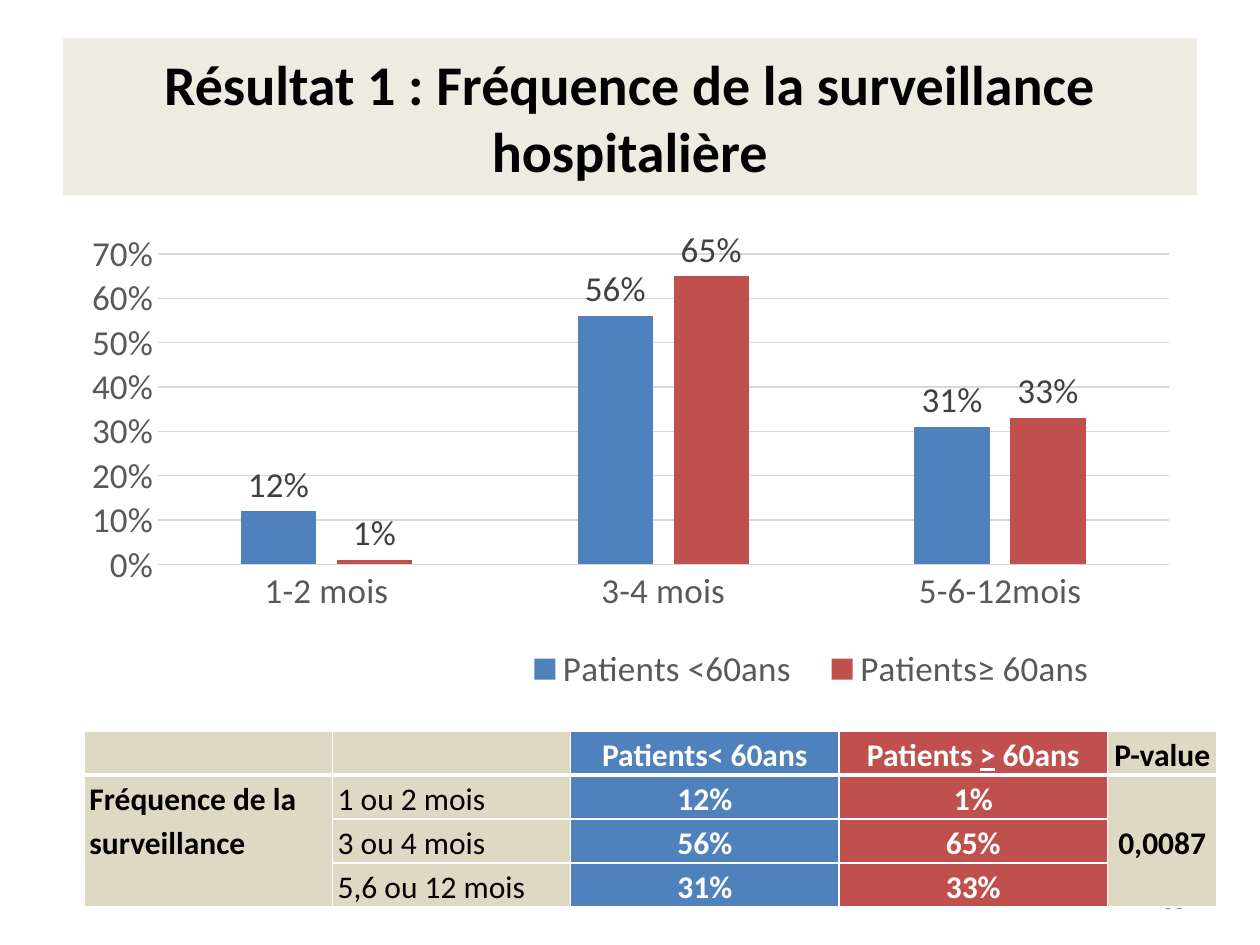
from dataclasses import dataclass

from lxml.etree import SubElement
from pptx import Presentation
from pptx.chart.data import CategoryChartData
from pptx.dml.color import RGBColor
from pptx.enum.chart import XL_CHART_TYPE, XL_LABEL_POSITION, XL_LEGEND_POSITION, XL_TICK_MARK
from pptx.enum.shapes import MSO_SHAPE
from pptx.enum.text import MSO_ANCHOR, PP_ALIGN
from pptx.oxml.ns import qn
from pptx.util import Inches, Pt

COLORS = {
    "black": "000000", "white": "FFFFFF", "banner": "EEECE1", "sand": "DDD9C3",
    "young": "4F81BD", "old": "C0504D", "axis": "595959", "label": "404040",
    "grid": "D9D9D9", "number": "8C8C8C",
}
COLUMN_WIDTHS = (1.97, 1.89, 2.13, 2.13, 0.87)
COLUMN_FILLS = ("sand", "sand", "young", "old", "sand")
ROW_HEIGHT = 0.35


@dataclass
class Span:
    text: str
    underline: bool = False


@dataclass
class Group:
    name: str
    color: str
    values: tuple


GROUPS = (
    Group("Patients <60ans", "young", (0.12, 0.56, 0.31)),
    Group("Patients≥ 60ans", "old", (0.01, 0.65, 0.33)),
)
PERIODS = ("1 ou 2 mois", "3 ou 4 mois", "5,6 ou 12 mois")


def rgb(name: str) -> RGBColor:
    return RGBColor.from_string(COLORS[name])


def style_font(font, size: float, color: str, **options) -> None:
    formats = {"name": "Calibri", "size": Pt(size), **options}
    for attribute, value in formats.items():
        setattr(font, attribute, value)
    font.color.rgb = rgb(color)


def write(frame, spans: list, align, size: float, color: str, bold: bool = False):
    frame.word_wrap = True
    frame.vertical_anchor = MSO_ANCHOR.MIDDLE
    para = frame.paragraphs[0]
    para.alignment = align
    for span in spans:
        run = para.add_run()
        run.text = span.text
        style_font(run.font, size, color, bold=bold, underline=span.underline)
    return para


def set_layout(element, index: int, **places: float) -> None:
    """Give a chart part a fixed place, in fractions of the chart."""
    for old in element.findall(qn("c:layout")):
        element.remove(old)
    layout = SubElement(element, qn("c:layout"))
    manual = SubElement(layout, qn("c:manualLayout"))
    if index == 0:
        SubElement(manual, qn("c:layoutTarget")).set("val", "inner")
    for side in ("x", "y"):
        SubElement(manual, qn(f"c:{side}Mode")).set("val", "edge")
    for side, value in places.items():
        SubElement(manual, qn(f"c:{side}")).set("val", str(value))
    element.insert(index, layout)


def set_borders(cell, widths: dict) -> None:
    properties = cell._tc.get_or_add_tcPr()
    for index, (side, width) in enumerate(widths.items()):
        line = SubElement(properties, qn(f"a:ln{side}"))
        line.set("w", str(Pt(width)))
        fill = SubElement(line, qn("a:solidFill"))
        SubElement(fill, qn("a:srgbClr")).set("val", COLORS["white"])
        properties.insert(index, line)


def add_title(page) -> None:
    banner = page.shapes.add_shape(
        MSO_SHAPE.RECTANGLE, Inches(0.5), Inches(0.3), Inches(9), Inches(1.25))
    banner.shadow.inherit = False
    banner.fill.solid()
    banner.fill.fore_color.rgb = rgb("banner")
    banner.line.fill.background()
    write(banner.text_frame, [Span("Résultat 1 : Fréquence de la surveillance hospitalière")],
          PP_ALIGN.CENTER, 32, "black", bold=True)


def add_page_number(page) -> None:
    box = page.shapes.add_textbox(Inches(7.17), Inches(6.95), Inches(2.33), Inches(0.4))
    write(box.text_frame, [Span("53")], PP_ALIGN.RIGHT, 12, "number")


def add_frequency_chart(page) -> None:
    data = CategoryChartData(number_format="0%")
    data.categories = ("1-2 mois", "3-4 mois", "5-6-12mois")
    for group in GROUPS:
        data.add_series(group.name, group.values)
    chart = page.shapes.add_chart(
        XL_CHART_TYPE.COLUMN_CLUSTERED, Inches(0.5), Inches(1.75),
        Inches(9), Inches(3.81), data).chart
    chart.has_title = False
    style_font(chart.font, 20, "black")

    # Axes
    for axis in (chart.category_axis, chart.value_axis):
        axis.major_tick_mark = axis.minor_tick_mark = XL_TICK_MARK.NONE
        style_font(axis.tick_labels.font, 20, "axis")
    values = chart.value_axis
    values.minimum_scale, values.maximum_scale, values.major_unit = 0, 0.7, 0.1
    values.tick_labels.number_format = "0%"
    values.tick_labels.number_format_is_linked = False
    values.format.line.fill.background()
    for line in (chart.category_axis.format.line, values.major_gridlines.format.line):
        line.color.rgb = rgb("grid")
        line.width = Pt(0.75)

    # Bars and their labels
    plot = chart.plots[0]
    plot.gap_width, plot.overlap, plot.vary_by_categories = 219, -27, False
    for series, group in zip(plot.series, GROUPS):
        series.format.fill.solid()
        series.format.fill.fore_color.rgb = rgb(group.color)
        labels = series.data_labels
        labels.show_value = True
        labels.position = XL_LABEL_POSITION.OUTSIDE_END
        labels.number_format = "0%"
        labels.number_format_is_linked = False
        style_font(labels.font, 20, "label")

    # Legend and plot places
    chart.has_legend = True
    chart.legend.position = XL_LEGEND_POSITION.BOTTOM
    chart.legend.include_in_layout = False
    style_font(chart.legend.font, 20, "axis")
    set_layout(chart.legend._element, 1, x=0.39, y=0.88, w=0.54, h=0.11)
    set_layout(chart._chartSpace.chart.plotArea, 0, x=0.084, y=0.07, w=0.891, h=0.647)


def table_rows() -> list:
    header = [[], [], [Span("Patients< 60ans")],
              [Span("Patients "), Span(">", underline=True), Span(" 60ans")],
              [Span("P-value")]]
    rows = [header]
    for index, period in enumerate(PERIODS):
        shares = [[Span(f"{group.values[index]:.0%}")] for group in GROUPS]
        rows.append([[], [Span(period)], *shares, []])
    rows[1][0] = [Span("Fréquence de la surveillance")]
    rows[1][4] = [Span("0,0087")]
    return rows


def add_frequency_table(page) -> None:
    rows = table_rows()
    table = page.shapes.add_table(
        len(rows), len(COLUMN_WIDTHS), Inches(0.67), Inches(5.8),
        Inches(sum(COLUMN_WIDTHS)), Inches(ROW_HEIGHT * len(rows))).table
    for column, width in zip(table.columns, COLUMN_WIDTHS):
        column.width = Inches(width)
    for row in table.rows:
        row.height = Inches(ROW_HEIGHT)
    for column in (0, 4):
        table.cell(1, column).merge(table.cell(3, column))

    margins = {"margin_left": 0.04, "margin_right": 0.04, "margin_top": 0, "margin_bottom": 0}
    for r, row in enumerate(rows):
        for c, spans in enumerate(row):
            cell = table.cell(r, c)
            for attribute, value in margins.items():
                setattr(cell, attribute, Inches(value))
            cell.fill.solid()
            cell.fill.fore_color.rgb = rgb(COLUMN_FILLS[c])
            set_borders(cell, {"L": 1, "R": 1, "T": 3 if r == 1 else 1, "B": 3 if r == 0 else 1})
            para = write(cell.text_frame, spans, PP_ALIGN.LEFT if c < 2 else PP_ALIGN.CENTER,
                         18, "white" if c in (2, 3) else "black", bold=c != 1)
            para.line_spacing = 1.15
            cell.vertical_anchor = MSO_ANCHOR.TOP if c == 0 else MSO_ANCHOR.MIDDLE


def main() -> None:
    deck = Presentation()
    deck.slide_width, deck.slide_height = Inches(10), Inches(7.5)
    page = deck.slides.add_slide(deck.slide_layouts[6])
    add_title(page)
    add_page_number(page)
    add_frequency_chart(page)
    add_frequency_table(page)
    deck.save("out.pptx")


if __name__ == "__main__":
    main()
